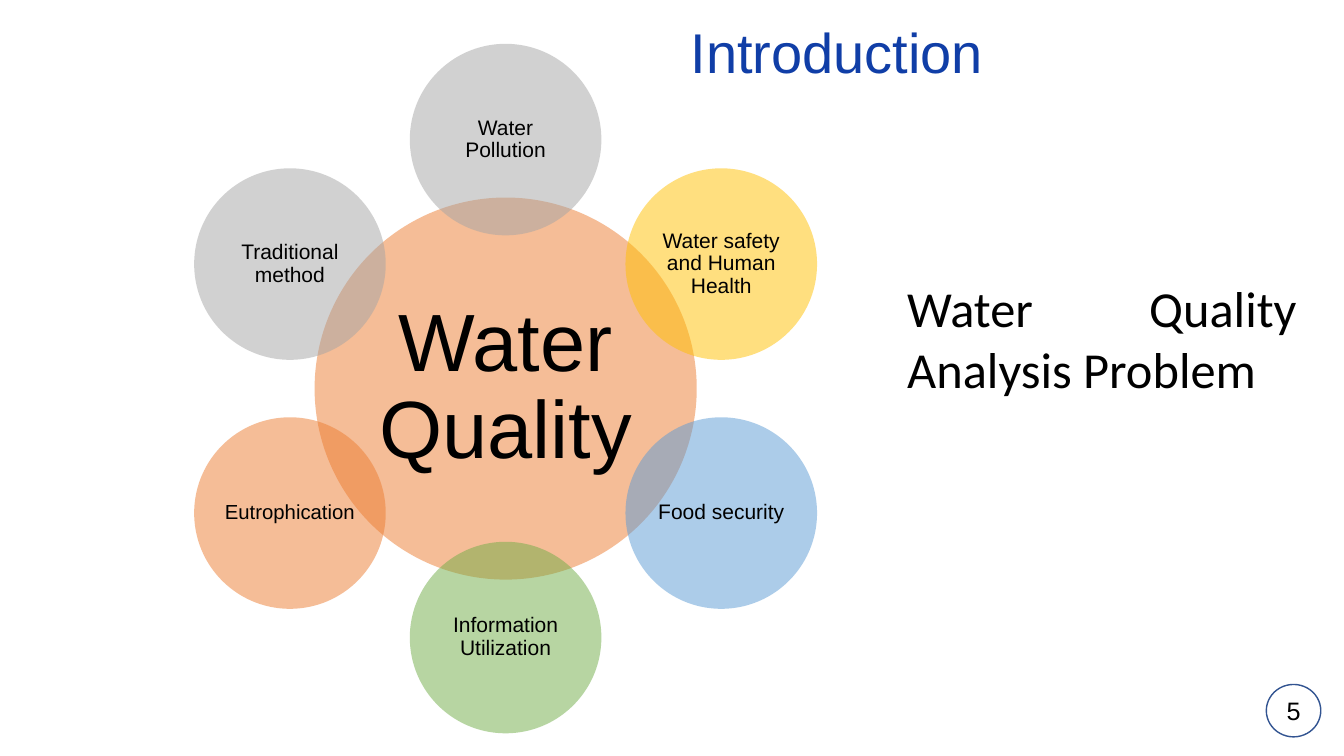
from math import cos, radians, sin

from lxml.etree import SubElement
from pptx import Presentation
from pptx.dml.color import RGBColor
from pptx.enum.shapes import MSO_SHAPE
from pptx.enum.text import MSO_ANCHOR, PP_ALIGN
from pptx.oxml.ns import qn
from pptx.util import Inches, Pt

COLORS = {
    "title": "103EA7", "text": "000000", "white": "FFFFFF", "badge": "325491",
    "orange": "ED7D31", "gray": "A5A5A5", "gold": "FFC000",
    "blue": "5B9BD5", "green": "70AD47",
}
CELL = Inches(0.1)  # the page is a grid of 133.3 columns by 75 rows
HUB_COLUMN, HUB_ROW, HUB_SIZE = 50.15, 38.55, 37.9
ORBIT, TOPIC_SIZE = 24.7, 19
TOPICS = [  # clockwise from the top
    ("Water Pollution", "gray", 15),
    ("Water safety and Human Health", "gold", 15),
    ("Food security", "blue", 15),
    ("Information Utilization", "green", 15),
    ("Eutrophication", "orange", 14.5),
    ("Traditional method", "gray", 15),
]


def grid(*cells):
    return [round(cell * CELL) for cell in cells]


def color(name):
    return RGBColor.from_string(COLORS[name])


def write(box, text, size, align=PP_ALIGN.CENTER, spacing=1.0,
          font="Arial", ink="text", anchor=MSO_ANCHOR.MIDDLE):
    frame = box.text_frame
    frame.text = text
    frame.word_wrap = True
    frame.vertical_anchor = anchor
    para = frame.paragraphs[0]
    para.alignment = align
    para.line_spacing = spacing
    span = para.runs[0].font
    span.name, span.size, span.bold = font, Pt(size), False
    span.color.rgb = color(ink)


def set_margins(box, margin):
    frame = box.text_frame
    frame.margin_left = frame.margin_right = margin
    frame.margin_top = frame.margin_bottom = margin


def add_circle(page, column, row, width, height, fill):
    """Draw an ellipse centred on the given column and row."""
    circle = page.shapes.add_shape(
        MSO_SHAPE.OVAL,
        *grid(column - width / 2, row - height / 2, width, height))
    circle.shadow.inherit = False
    circle.fill.solid()
    circle.fill.fore_color.rgb = color(fill)
    return circle


def add_bubble(page, column, row, size, fill, text, font_size, margin):
    """Draw a half-transparent circle with its label."""
    bubble = add_circle(page, column, row, size, size, fill)
    fill_color = bubble._element.spPr.find(".//" + qn("a:srgbClr"))
    SubElement(fill_color, qn("a:alpha"), val="50000")
    bubble.line.fill.background()
    set_margins(bubble, Inches(margin))
    write(bubble, text, font_size, spacing=0.9)


def add_diagram(page):
    add_bubble(page, HUB_COLUMN, HUB_ROW, HUB_SIZE, "orange",
               "Water Quality", 58, 0.08)
    for index, (text, fill, font_size) in enumerate(TOPICS):
        angle = radians(index * 360 / len(TOPICS))
        add_bubble(page, HUB_COLUMN + ORBIT * sin(angle),
                   HUB_ROW - ORBIT * cos(angle), TOPIC_SIZE,
                   fill, text, font_size, 0.02)


def add_title(page, text):
    title = page.shapes.title
    title.left, title.top, title.width, title.height = grid(25.5, 1.2, 115, 14.5)
    write(title, text, 40, spacing=0.9, ink="title", anchor=MSO_ANCHOR.TOP)
    title.text_frame.margin_top = Inches(0.13)


def add_statement(page, text):
    box = page.shapes.add_textbox(*grid(89, 27, 40.6, 13.1))
    write(box, text, 36, PP_ALIGN.JUSTIFY, font="Calibri", anchor=MSO_ANCHOR.TOP)


def add_page_number(page, number):
    badge = add_circle(page, 128.3, 70.5, 5.4, 5.2, "white")
    badge.line.color.rgb = color("badge")
    badge.line.width = Pt(1)
    set_margins(badge, 0)
    write(badge, number, 18)


def main():
    deck = Presentation()
    deck.slide_width, deck.slide_height = Inches(13.33), Inches(7.5)
    page = deck.slides.add_slide(deck.slide_layouts.get_by_name("Title Only"))
    add_page_number(page, "5")
    add_title(page, "Introduction")
    add_statement(page, "Water Quality Analysis Problem")
    add_diagram(page)
    deck.save("out.pptx")


if __name__ == "__main__":
    main()
